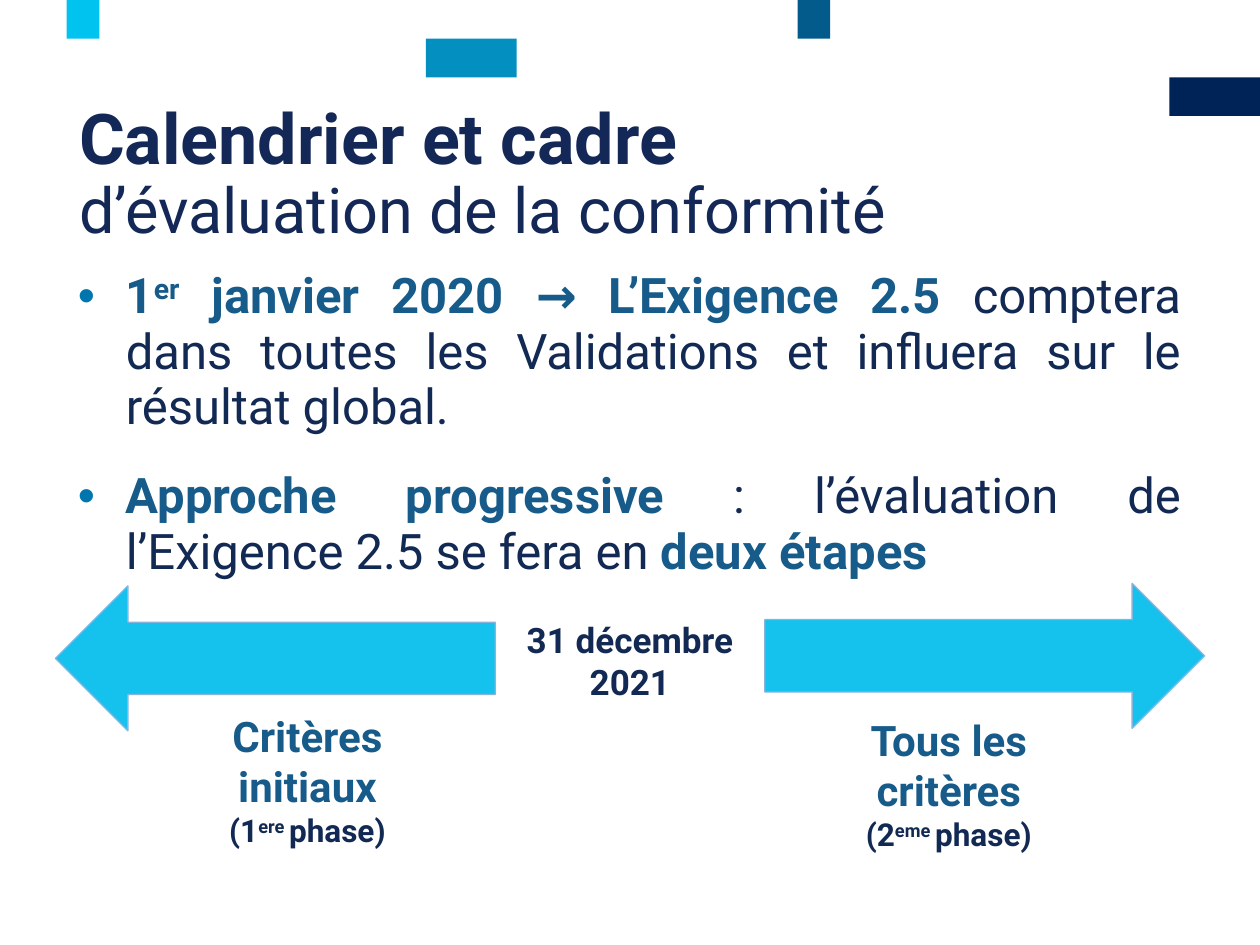
from lxml.etree import SubElement as Sub
from pptx import Presentation
from pptx.dml.color import RGBColor as Rgb
from pptx.enum.shapes import MSO_SHAPE as Shape
from pptx.enum.text import MSO_ANCHOR as Anchor, PP_ALIGN as Align
from pptx.oxml.ns import qn
from pptx.util import Inches, Pt

HUES = {
    "night": "002357", "deep": "025B8B", "teal": "038FBF", "cyan": "00C3F0",
    "title": "132856", "ink": "122954", "blue": "165B89", "dot": "0076AF",
    "arrow": "15C2EE", "edge": "85B5DF",
}
WIDE, HIGH = 10, 7.5
COLS, ROWS = 100, 75


def hue(name):
    """Return the colour called name."""
    return Rgb.from_string(HUES[name])


def place(x, y, w, h):
    """Turn grid columns and rows into slide lengths."""
    col, row = Inches(WIDE) / COLS, Inches(HIGH) / ROWS
    return [int(n) for n in (x * col, y * row, w * col, h * row)]


def block(slide, kind, spot, fill, edge=None, turn=0):
    """Add a filled preset shape."""
    form = slide.shapes.add_shape(kind, *place(*spot))
    form.shadow.inherit = False
    form.rotation = turn
    form.fill.solid()
    form.fill.fore_color.rgb = hue(fill)
    if edge:
        form.line.color.rgb = hue(edge)
        form.line.width = Pt(0.75)
    else:
        form.line.fill.background()


def bullet(para):
    """Give a paragraph a hanging round bullet."""
    props = para._p.get_or_add_pPr()
    props.set("marL", str(Inches(0.38)))
    props.set("indent", str(Inches(-0.38)))
    Sub(Sub(props, qn("a:buClr")), qn("a:srgbClr"), val=HUES["dot"])
    Sub(props, qn("a:buFont"), typeface="Arial")
    Sub(props, qn("a:buChar"), char="•")


def write(para, text, size=28, color="ink", bold=False, lift=0):
    """Add one formatted run to a paragraph."""
    run = para.add_run()
    run.text = text
    font = run.font
    font.name, font.size, font.bold = "Roboto", Pt(size), bold
    font.color.rgb = hue(color)
    if lift:
        run._r.get_or_add_rPr().set("baseline", str(lift * 1000))


def panel(slide, spot, count, align=Align.LEFT, lead=None):
    """Add a wrapped text box and return its frame and paragraphs."""
    frame = slide.shapes.add_textbox(*place(*spot)).text_frame
    frame.word_wrap = True
    paras = [frame.paragraphs[0]]
    paras += [frame.add_paragraph() for _ in range(count - 1)]
    for para in paras:
        para.alignment = align
        if lead:
            para.line_spacing = lead
    return frame, paras


def heading(slide):
    """Add the two-line title."""
    _, (para,) = panel(slide, (5.3, 7.8, 89.5, 12), 1, lead=0.89)
    write(para, "Calendrier et cadre", size=40, color="title", bold=True)
    para.add_line_break()
    write(para, "d’évaluation de la conformité", size=36, color="title")


def points(slide):
    """Add the two bulleted points."""
    mark = {"color": "blue", "bold": True}
    _, (start, steps) = panel(slide, (5.2, 20.9, 89.5, 26), 2, Align.JUSTIFY, 0.94)
    for para in (start, steps):
        para.space_after = Pt(12)
        bullet(para)
    steps.space_before = Pt(7.5)
    write(start, "1", **mark)
    write(start, "er", lift=30, **mark)
    write(start, "\u00a0janvier\u00a02020 → L’Exigence\u00a02.5 ".replace("\u00a0", " "), **mark)
    write(start, "comptera dans toutes les Validations et influera sur le résultat global.")
    write(steps, "Approche progressive", **mark)
    write(steps, " : l’évaluation de l’Exigence 2.5 se fera en ")
    write(steps, "deux étapes", **mark)


def date(slide):
    """Add the date between the arrows."""
    frame, paras = panel(slide, (38, 49.2, 24, 6.5), 2, Align.CENTER)
    frame.vertical_anchor = Anchor.MIDDLE
    frame.margin_left = frame.margin_right = 0
    frame.margin_top = frame.margin_bottom = 0
    for para, text in zip(paras, ("31 décembre", "2021")):
        write(para, text, size=20, bold=True)


def phase(slide, spot, name, rank, tail):
    """Add the label of one phase."""
    _, (top, low) = panel(slide, spot, 2, Align.CENTER)
    write(top, name, size=24, color="blue", bold=True)
    for text, lift in ((f"({rank}", 0), (tail, 30), ("phase)", 0)):
        write(low, text, size=18, bold=True, lift=lift)


def main():
    """Build and save the slide."""
    deck = Presentation()
    deck.slide_width, deck.slide_height = Inches(WIDE), Inches(HIGH)
    slide = deck.slides.add_slide(deck.slide_layouts[6])
    band = 3.07
    for x, step, w, fill in (
        (92.8, 2, 7.2, "night"), (63.3, 0, 2.6, "deep"),
        (33.8, 1, 7.2, "teal"), (5.3, 0, 2.6, "cyan"),
    ):
        block(slide, Shape.RECTANGLE, (x, step * band, w, band), fill)
    heading(slide)
    points(slide)
    for x, y, turn in ((60.7, 46.3, 0), (4.4, 46.5, 180)):
        block(slide, Shape.RIGHT_ARROW, (x, y, 34.9, 11.5), "arrow", "edge", turn)
    date(slide)
    phase(slide, (12.5, 55.9, 23.8, 12.1), "Critères initiaux", 1, "ere ")
    phase(slide, (65.9, 56.2, 18.8, 12.1), "Tous les critères", 2, "eme ")
    deck.save("out.pptx")


if __name__ == "__main__":
    main()
